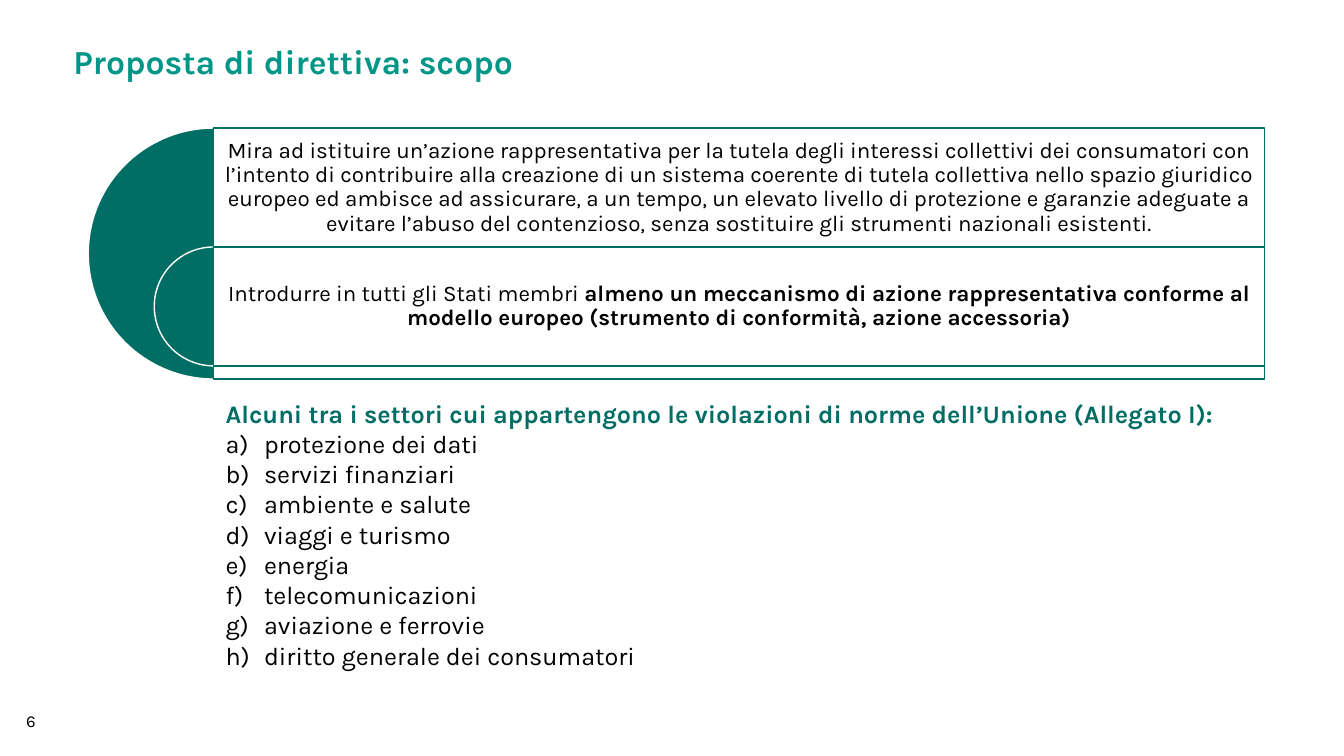
from lxml import etree
from pptx import Presentation
from pptx import util as u
from pptx.dml.color import RGBColor
from pptx.enum import shapes, text
from pptx.oxml.ns import qn

TITLE_GREEN = RGBColor(0x00, 0x96, 0x87)
DARK_GREEN = RGBColor(0x00, 0x6E, 0x64)
INK = RGBColor(0x01, 0x00, 0x00)
WHITE = RGBColor(0xFF, 0xFF, 0xFF)

PANEL_LEFT, PANEL_TOP, PANEL_WIDTH = 2.12, 1.27, 10.42
OUTER_SIZE, ROW_HEIGHT = 2.49, 1.18

AIMS = [
    [("Mira ad istituire un’azione rappresentativa per la tutela degli interessi "
      "collettivi dei consumatori con l’intento di contribuire alla creazione di un "
      "sistema coerente di tutela collettiva nello spazio giuridico europeo ed ambisce "
      "ad assicurare, a un tempo, un elevato livello di protezione e garanzie adeguate a "
      "evitare l’abuso del contenzioso, senza sostituire gli strumenti nazionali "
      "esistenti.", False)],
    [("Introdurre in tutti gli Stati membri ", False),
     ("almeno un meccanismo di azione rappresentativa conforme al modello europeo "
      "(strumento di conformità, azione accessoria)", True)],
]
SECTORS_HEADING = ("Alcuni tra i settori cui appartengono le violazioni di norme "
                   "dell’Unione (Allegato I):")
SECTORS = ["protezione dei dati", "servizi finanziari", "ambiente e salute",
           "viaggi e turismo", "energia", "telecomunicazioni",
           "aviazione e ferrovie", "diritto generale dei consumatori"]


class SlideBuilder:
    font_name = "Karla"

    def __init__(self, slide):
        self.slide = slide

    def text_box(self, left, top, width, height, anchor=text.MSO_ANCHOR.TOP, inset=None):
        box = self.slide.shapes.add_textbox(*map(u.Inches, (left, top, width, height)))
        frame = box.text_frame
        frame.word_wrap = True
        frame.vertical_anchor = anchor
        if inset is not None:
            frame.margin_left = frame.margin_right = u.Inches(inset)
            frame.margin_top = frame.margin_bottom = u.Inches(inset)
        return frame

    def add_runs(self, paragraph, parts, size, color=INK):
        """Fill a paragraph with (words, bold) parts."""
        for words, bold in parts:
            run = paragraph.add_run()
            run.text = words
            run.font.name = self.font_name
            run.font.size = u.Pt(size)
            run.font.bold = bold
            run.font.color.rgb = color

    def letter(self, paragraph):
        """Number a paragraph a), b), c) with a hanging indent."""
        properties = paragraph._p.get_or_add_pPr()
        indent = u.Inches(0.38)
        properties.set("marL", str(indent))
        properties.set("indent", str(-indent))
        etree.SubElement(properties, qn("a:buFont"), typeface="+mj-lt")
        etree.SubElement(properties, qn("a:buAutoNum"), type="alphaLcParenR")

    def shape(self, kind, left, top, width, height, fill, line):
        shape = self.slide.shapes.add_shape(
            kind, *map(u.Inches, (left, top, width, height)))
        shape.shadow.inherit = False
        shape.fill.solid()
        shape.fill.fore_color.rgb = fill
        shape.line.color.rgb = line
        shape.line.width = u.Pt(1)
        return shape

    def half_disc(self, top, size):
        """Left half of a disc centred on the panel's left edge."""
        disc = self.shape(shapes.MSO_SHAPE.PIE, PANEL_LEFT - size / 2, top, size, size,
                          DARK_GREEN, WHITE)
        disc.adjustments[0] = 54
        disc.adjustments[1] = 162

    def panel(self, top, height):
        panel = self.shape(shapes.MSO_SHAPE.RECTANGLE, PANEL_LEFT, top, PANEL_WIDTH,
                           height, WHITE, DARK_GREEN)
        color = panel._element.spPr.find(qn("a:solidFill"))[0]
        etree.SubElement(color, qn("a:alpha"), val="90000")

    def aim(self, top, size, parts):
        self.half_disc(top, size)
        self.panel(top, size)
        frame = self.text_box(PANEL_LEFT, top, PANEL_WIDTH, ROW_HEIGHT,
                              text.MSO_ANCHOR.MIDDLE, 0.07)
        paragraph = frame.paragraphs[0]
        paragraph.alignment = text.PP_ALIGN.CENTER
        paragraph.line_spacing = 0.9
        self.add_runs(paragraph, parts, 16)


def main():
    presentation = Presentation()
    presentation.slide_width = u.Inches(13.33)
    presentation.slide_height = u.Inches(7.5)
    builder = SlideBuilder(presentation.slides.add_slide(presentation.slide_layouts[6]))

    title = builder.text_box(0.63, 0.4, 11.97, 0.91).paragraphs[0]
    title.line_spacing = 0.9
    builder.add_runs(title, [("Proposta di direttiva: scopo", True)], 24, TITLE_GREEN)

    number = builder.text_box(0.16, 6.95, 0.47, 0.4, text.MSO_ANCHOR.MIDDLE)
    builder.add_runs(number.paragraphs[0], [("6", False)], 12)

    for row, (size, parts) in enumerate(zip((OUTER_SIZE, ROW_HEIGHT), AIMS)):
        builder.aim(PANEL_TOP + row * ROW_HEIGHT, size, parts)

    sectors = builder.text_box(2.14, 3.9, 11.19, 2.83)
    builder.add_runs(sectors.paragraphs[0], [(SECTORS_HEADING, True)], 18, DARK_GREEN)
    for sector in SECTORS:
        paragraph = sectors.add_paragraph()
        builder.letter(paragraph)
        builder.add_runs(paragraph, [(sector, False)], 18)

    presentation.save("out.pptx")


if __name__ == "__main__":
    main()
